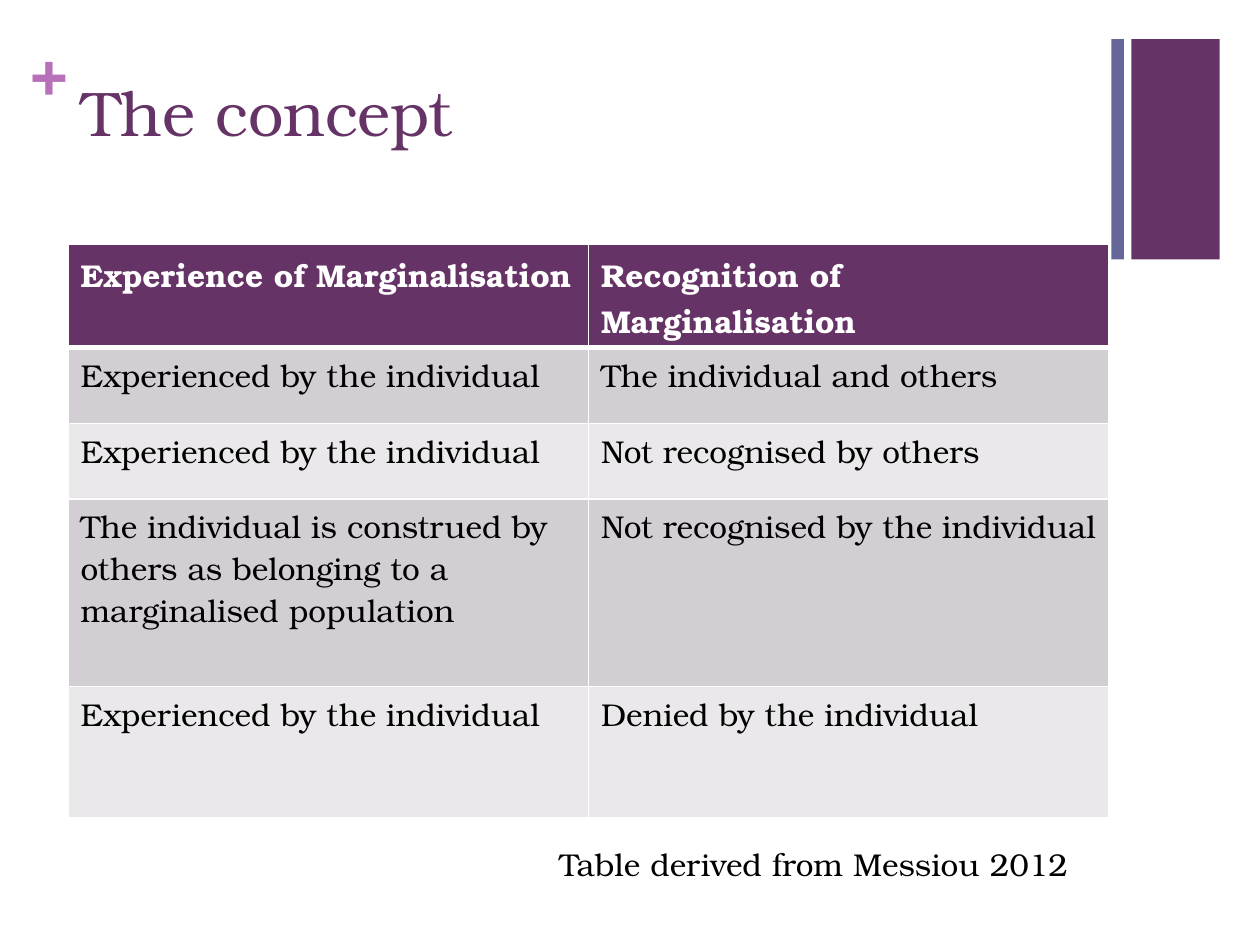
from lxml.etree import SubElement
from pptx import Presentation
from pptx.dml.color import RGBColor
from pptx.enum.shapes import MSO_SHAPE
from pptx.enum.text import MSO_ANCHOR, PP_ALIGN
from pptx.oxml.ns import qn
from pptx.util import Inches, Pt

FONT = "TeX Gyre Bonum"
PURPLE = RGBColor(0x66, 0x33, 0x66)
BLUE = RGBColor(0x66, 0x66, 0x99)
ORCHID = RGBColor(0xB8, 0x70, 0xB8)
DARK_BAND = RGBColor(0xD3, 0xCE, 0xD3)
LIGHT_BAND = RGBColor(0xEA, 0xE8, 0xEA)
WHITE = RGBColor(0xFF, 0xFF, 0xFF)
BLACK = RGBColor(0, 0, 0)

ROWS = [
    ("Experience of Marginalisation", "Recognition of Marginalisation"),
    ("Experienced by the individual", "The individual and others"),
    ("Experienced by the individual", "Not recognised by others"),
    ("The individual is construed by others as belonging to a marginalised population",
     "Not recognised by the individual"),
    ("Experienced by the individual", "Denied by the individual"),
]
ROW_HEIGHTS = [0.82, 0.6, 0.6, 1.49, 1.04]


def write(text_frame, text, size, color, bold=False):
    paragraph = text_frame.paragraphs[0]
    paragraph.alignment = PP_ALIGN.LEFT
    run = paragraph.add_run()
    run.text = text
    run.font.name = FONT
    run.font.size = Pt(size)
    run.font.bold = bold
    run.font.color.rgb = color


def add_text(slide, box, text, size, color, bold=False, margin=None):
    text_frame = slide.shapes.add_textbox(*map(Inches, box)).text_frame
    text_frame.word_wrap = True
    if margin is not None:
        text_frame.margin_left = text_frame.margin_right = Inches(margin)
        text_frame.margin_top = text_frame.margin_bottom = Inches(margin)
    write(text_frame, text, size, color, bold)


def add_bar(slide, box, color):
    bar = slide.shapes.add_shape(MSO_SHAPE.RECTANGLE, *map(Inches, box))
    bar.shadow.inherit = False
    bar.fill.solid()
    bar.fill.fore_color.rgb = color
    bar.line.fill.background()


def add_decoration(slide):
    add_bar(slide, (8.98, 0.31, 0.7, 1.75), PURPLE)
    add_text(slide, (0.24, 0.25, 0.29, 0.61), "+", 36, ORCHID, bold=True, margin=0)
    add_bar(slide, (8.82, 0.31, 0.1, 1.75), BLUE)


def set_title(slide, box, text):
    title = slide.shapes.title
    title.left, title.top, title.width, title.height = map(Inches, box)
    title.text_frame.vertical_anchor = MSO_ANCHOR.TOP
    write(title.text_frame, text, 36, PURPLE)


def set_borders(cell, widths):
    properties = cell._tc.get_or_add_tcPr()
    for side, width in widths.items():
        line = SubElement(properties, qn(f"a:ln{side}"), w=str(Pt(width)))
        fill = SubElement(line, qn("a:solidFill"))
        SubElement(fill, qn("a:srgbClr"), val=str(WHITE))


def add_concept_table(slide, box):
    left, top, width = map(Inches, box)
    height = Inches(sum(ROW_HEIGHTS))
    table = slide.shapes.add_table(len(ROWS), 2, left, top, width, height).table
    for index, (texts, row_height) in enumerate(zip(ROWS, ROW_HEIGHTS)):
        row = table.rows[index]
        row.height = Inches(row_height)
        header = index == 0
        band = PURPLE if header else DARK_BAND if index % 2 else LIGHT_BAND
        for cell, text in zip(row.cells, texts):
            # The rule under the header is thicker than the others
            set_borders(cell, {"L": 1, "R": 1, "T": 3 if index == 1 else 1,
                               "B": 3 if header else 1})
            cell.fill.solid()
            cell.fill.fore_color.rgb = band
            write(cell.text_frame, text, 18, WHITE if header else BLACK, header)


def main():
    presentation = Presentation()
    presentation.slide_width, presentation.slide_height = Inches(10), Inches(7.5)
    slide = presentation.slides.add_slide(presentation.slide_layouts[5])

    add_decoration(slide)
    set_title(slide, (0.55, 0.53, 8.26, 1.22), "The concept")
    add_concept_table(slide, (0.54, 1.94, 8.26))
    # Source of the table
    add_text(slide, (4.34, 6.66, 4.38, 0.4), "Table derived from Messiou 2012", 18, BLACK)

    presentation.save("out.pptx")


if __name__ == "__main__":
    main()
